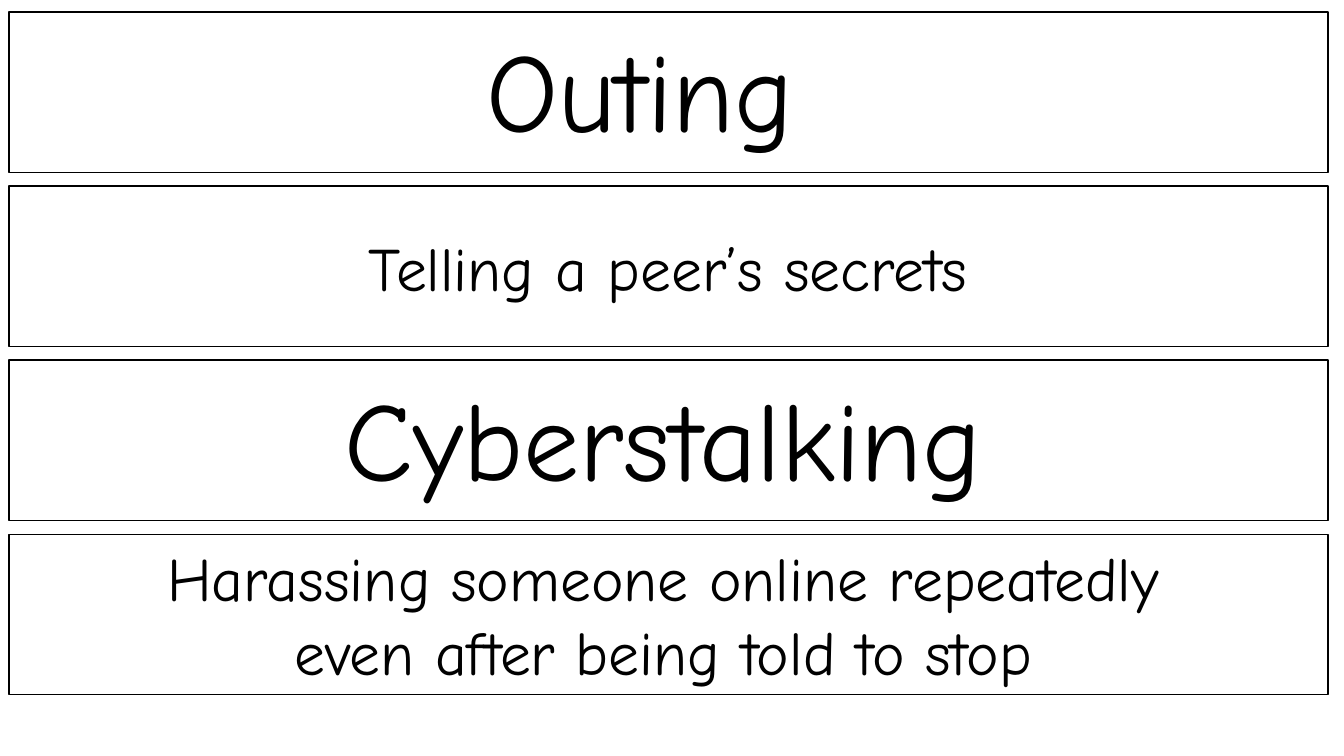
from pptx import Presentation
from pptx.dml.color import RGBColor
from pptx.enum.shapes import MSO_SHAPE
from pptx.enum.text import MSO_AUTO_SIZE, PP_ALIGN
from pptx.util import Inches, Pt

RECTANGLE = MSO_SHAPE.RECTANGLE
CENTER = PP_ALIGN.CENTER
GROW = MSO_AUTO_SIZE.SHAPE_TO_FIT_TEXT


def color(hex_code):
    return RGBColor.from_string(hex_code)


class CardSlide:
    FONT = "Comic Neue"
    INK = "000000"
    PAPER = "FFFFFF"
    LEFT, WIDTH = 0.09, 13.08
    TOP, HEIGHT = 0.12, 1.59
    ROW_STEP = (5.3 - TOP) / 3

    def __init__(self, deck):
        self.slide = deck.slides.add_slide(deck.slide_layouts[6])

    def row_top(self, row):
        return self.TOP + row * self.ROW_STEP

    def card(self, row):
        card = self.slide.shapes.add_shape(
            RECTANGLE, Inches(self.LEFT), Inches(self.row_top(row)),
            Inches(self.WIDTH), Inches(self.HEIGHT))
        card.shadow.inherit = False
        card.fill.solid()
        card.fill.fore_color.rgb = color(self.PAPER)
        card.line.color.rgb = color(self.INK)
        card.line.width = Pt(1)

    def label(self, row, wording, size, left, drop, width, height):
        label = self.slide.shapes.add_textbox(
            Inches(left), Inches(self.row_top(row) + drop),
            Inches(width), Inches(height))
        frame = label.text_frame
        frame.word_wrap = True
        frame.auto_size = GROW
        frame.text = wording
        paragraph = frame.paragraphs[0]
        paragraph.alignment = CENTER
        font = paragraph.runs[0].font
        font.name = self.FONT
        font.size = Pt(size)
        font.color.rgb = color(self.INK)


def main():
    deck = Presentation()
    deck.slide_width = Inches(13.33)
    deck.slide_height = Inches(7.5)

    term_size, meaning_size = 80, 44
    entries = [
        ("Outing", term_size, 0.81, 0.03, 11.08, 1.45),
        ("Telling a peer’s secrets", meaning_size, 0.59, 0.39, 12.08, 0.84),
        ("Cyberstalking", term_size, 1.04, 0.04, 11.08, 1.45),
        ("Harassing someone online repeatedly even after being told to stop",
         meaning_size, 1.04, 0.01, 11.08, 1.58),
    ]

    cards = CardSlide(deck)
    for row in range(len(entries)):
        cards.card(row)
    for row, entry in enumerate(entries):
        cards.label(row, *entry)

    deck.save("out.pptx")


if __name__ == "__main__":
    main()
